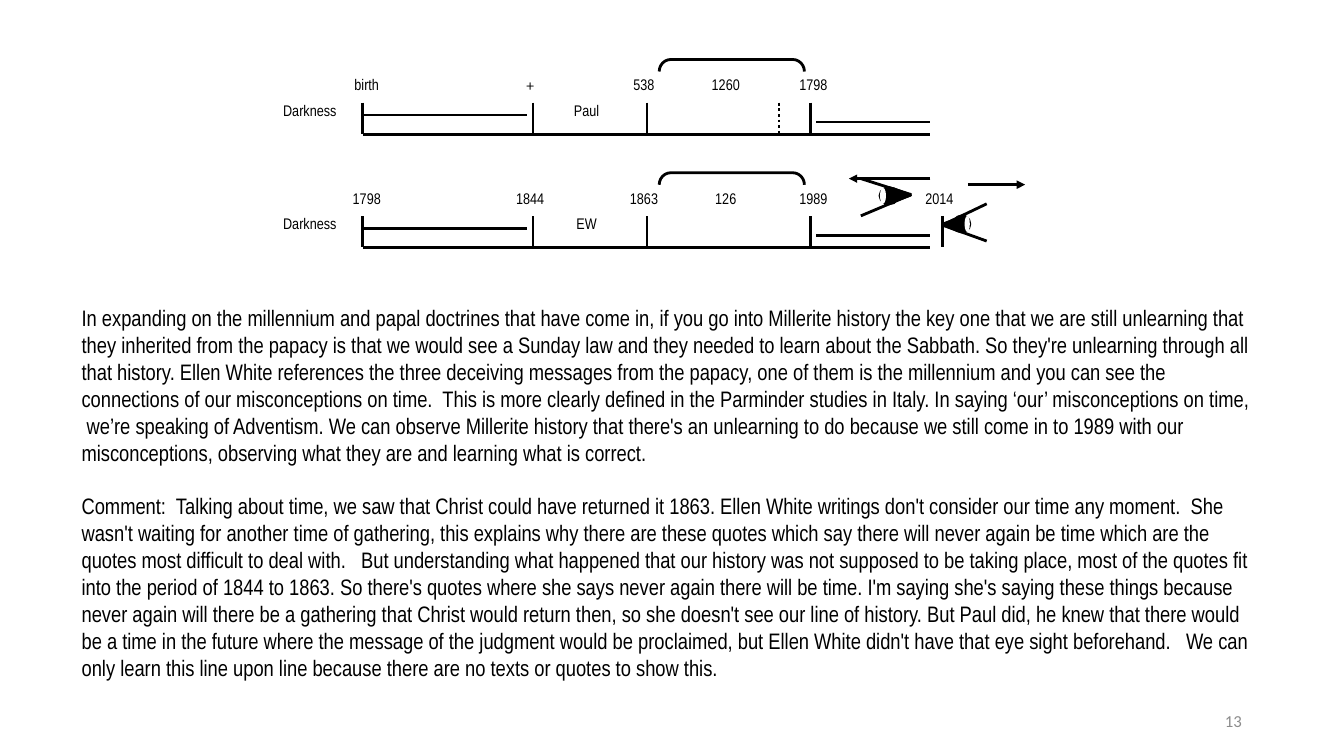
import pptx
import pptx.util
import pptx.dml.color
import pptx.enum.dml
import pptx.enum.shapes
import pptx.enum.text
import pptx.oxml.ns
from lxml import etree

Pt = pptx.util.Pt
SHAPE = pptx.enum.shapes.MSO_SHAPE
ALIGN = pptx.enum.text.PP_ALIGN
ANCHOR = pptx.enum.text.MSO_ANCHOR
qn = pptx.oxml.ns.qn

COLORS = {"ink": "000000", "paper": "FFFFFF", "number": "8C8C8C"}
FONT = "Arial Narrow"
STROKE = 2

# Horizontal offsets from the left edge of a timeline box
TICKS = [67, 188.6, 270, 386.6]
DATE_CENTERS = [69.8, 186.5, 267.8, 388.8]
SPAN_CENTER = 326.2
NAME_CENTER = 226.8

# Sentences of each paragraph, joined by a space
PARAGRAPHS = [
    ["In expanding on the millennium and papal doctrines that have come in, if you go into "
     "Millerite history the key one that we are still unlearning that they inherited from the "
     "papacy is that we would see a Sunday law and they needed to learn about the Sabbath.",
     "So they're unlearning through all that history.",
     "Ellen White references the three deceiving messages from the papacy, one of them is the "
     "millennium and you can see the connections of our misconceptions on time. ",
     "This is more clearly defined in the Parminder studies in Italy.",
     "In saying ‘our’ misconceptions on time,  we’re speaking of Adventism.",
     "We can observe Millerite history that there's an unlearning to do because we still come "
     "in to 1989 with our misconceptions, observing what they are and learning what is correct."],
    ["Comment:  Talking about time, we saw that Christ could have returned it 1863.",
     "Ellen White writings don't consider our time any moment. ",
     "She wasn't waiting for another time of gathering, this explains why there are these "
     "quotes which say there will never again be time which are the quotes most difficult to "
     "deal with.  ",
     "But understanding what happened that our history was not supposed to be taking place, "
     "most of the quotes fit into the period of 1844 to 1863.",
     "So there's quotes where she says never again there will be time.",
     "I'm saying she's saying these things because never again will there be a gathering that "
     "Christ would return then, so she doesn't see our line of history.",
     "But Paul did, he knew that there would be a time in the future where the message of the "
     "judgment would be proclaimed, but Ellen White didn't have that eye sight beforehand.  ",
     "We can only learn this line upon line because there are no texts or quotes to show this."],
]


def rgb(name):
    return pptx.dml.color.RGBColor.from_string(COLORS[name])


def write(paragraph, text, size=11, font=FONT, color="ink", align=ALIGN.CENTER, before=0):
    paragraph.alignment = align
    paragraph.space_before = Pt(before)
    run = paragraph.add_run()
    run.text = text
    run.font.size = Pt(size)
    run.font.name = font
    run.font.color.rgb = rgb(color)


def add_text(slide, text, left, top, width, height, inset=2.9, anchor=ANCHOR.TOP, **text_format):
    frame = slide.shapes.add_textbox(Pt(left), Pt(top), Pt(width), Pt(height)).text_frame
    frame.word_wrap = True
    frame.vertical_anchor = anchor
    frame.margin_left = frame.margin_right = Pt(inset)
    frame.margin_top = frame.margin_bottom = Pt(inset)
    write(frame.paragraphs[0], text, **text_format)


def add_line(slide, x1, y1, x2, y2, dotted=False, arrow=False):
    connector = slide.shapes.add_connector(
        pptx.enum.shapes.MSO_CONNECTOR.STRAIGHT, Pt(x1), Pt(y1), Pt(x2), Pt(y2))
    connector.line.color.rgb = rgb("ink")
    connector.line.width = Pt(STROKE)
    if dotted:
        connector.line.dash_style = pptx.enum.dml.MSO_LINE.ROUND_DOT
    properties = connector._element.spPr
    if arrow:
        etree.SubElement(properties.find(qn("a:ln")), qn("a:tailEnd"), type="triangle")
    etree.SubElement(properties, qn("a:effectLst"))


def add_centered_shape(slide, kind, center_x, center_y, width, height,
                       rotation=0, fill=None, outlined=True):
    shape = slide.shapes.add_shape(
        kind, Pt(center_x - width / 2), Pt(center_y - height / 2), Pt(width), Pt(height))
    shape.shadow.inherit = False
    shape.rotation = rotation
    if fill:
        shape.fill.solid()
        shape.fill.fore_color.rgb = rgb(fill)
    else:
        shape.fill.background()
    if outlined:
        shape.line.color.rgb = rgb("ink")
        shape.line.width = Pt(STROKE)
    else:
        shape.line.fill.background()
    return shape


def add_timeline(slide, left, top, width, dates, span, name, dotted_tick=False):
    tick_top, base = top + 22.3, top + 44.7
    right = left + width
    add_line(slide, left + TICKS[0], base, right, base)
    add_text(slide, "Darkness", left, top + 18, 58.3, 21.6)
    for tick, center, date in zip(TICKS, DATE_CENTERS, dates):
        add_line(slide, left + tick, tick_top, left + tick, base)
        add_text(slide, date, left + center - 16, top, 32, 21.6,
                 font="Quicksand" if date == "+" else FONT)
    add_text(slide, span, left + SPAN_CENTER - 16, top, 32, 21.6)
    add_text(slide, name, left + NAME_CENTER - 16, top + 18, 32, 21.6)
    add_line(slide, left + TICKS[0], top + 31, left + 184.3, top + 31)
    add_line(slide, left + 391, top + 36, right, top + 36)
    bracket = add_centered_shape(slide, SHAPE.LEFT_BRACKET, left + 330.5, top - 4.3,
                                 8.6, 103.7, rotation=90)
    bracket.adjustments[0] = 0.96
    if dotted_tick:
        add_line(slide, left + 364.3, tick_top, left + 364.3, base, dotted=True)


def add_eye(slide, left, top, width, height, turned=False):
    """Draw an eye looking right, or turned half round to look left."""
    def place(x, y):
        if turned:
            x, y = 1 - x, 1 - y
        return left + x * width, top + y * height

    turn = 180 if turned else 0
    tip = place(1, 0.43)
    for corner in (0, 1):
        add_line(slide, *place(0, corner), *tip)
    add_centered_shape(slide, SHAPE.OVAL, *place(0.56, 0.46), 0.36 * width, 0.43 * height,
                       rotation=turn, fill="ink")
    add_centered_shape(slide, SHAPE.ISOSCELES_TRIANGLE, *place(0.7, 0.42), 0.53 * width,
                       0.3 * height, rotation=(340.6 + turn) % 360, fill="ink")
    add_centered_shape(slide, SHAPE.OVAL, *place(0.44, 0.46), 0.12 * width, 0.43 * height,
                       rotation=turn, fill="paper", outlined=False)


def add_turning_point(slide, left, top):
    """Add the 2014 mark with its eyes and arrows."""
    add_text(slide, "2014", left + 48.7, top + 4.3, 32, 21.6)
    add_line(slide, left + 66.8, top + 26.6, left + 66.8, top + 49)
    add_eye(slide, left + 8.6, top, 36, 26.6)
    add_eye(slide, left + 66.8, top + 18, 31.7, 26.6, turned=True)
    add_line(slide, left + 58.3, top, left, top, arrow=True)
    add_line(slide, left + 85, top + 4.3, left + 126, top + 4.3, arrow=True)


def fill_body(body, left, top, width, height):
    body.left, body.top, body.width, body.height = Pt(left), Pt(top), Pt(width), Pt(height)
    frame = body.text_frame
    frame.word_wrap = True
    frame.auto_size = pptx.enum.text.MSO_AUTO_SIZE.NONE
    for index, sentences in enumerate(PARAGRAPHS):
        paragraph = frame.add_paragraph() if index else frame.paragraphs[0]
        write(paragraph, " ".join(sentences), size=16, align=ALIGN.LEFT,
              before=19.3 if index else 0)
        properties = paragraph._p.get_or_add_pPr()
        properties.set("marL", "0")
        properties.set("indent", "0")
        etree.SubElement(properties, qn("a:buNone"))


def main():
    presentation = pptx.Presentation()
    presentation.slide_width, presentation.slide_height = Pt(960), Pt(540)
    slide = presentation.slides.add_slide(presentation.slide_layouts[1])
    title = slide.shapes.title._element
    title.getparent().remove(title)

    add_timeline(slide, 192.2, 51.1, 472.3, ["birth", "+", "538", "1798"], "1260", "Paul",
                 dotted_tick=True)
    add_timeline(slide, 192.2, 132, 472.3, ["1798", "1844", "1863", "1989"], "126", "EW")
    add_turning_point(slide, 606.3, 127.6)
    fill_body(slide.placeholders[1], 51.1, 213.8, 851, 300)
    add_text(slide, "13", 678.2, 500.4, 216, 28.8, inset=7.2, anchor=ANCHOR.MIDDLE,
             size=12, font="Calibri", color="number", align=ALIGN.RIGHT)
    presentation.save("out.pptx")


if __name__ == "__main__":
    main()
